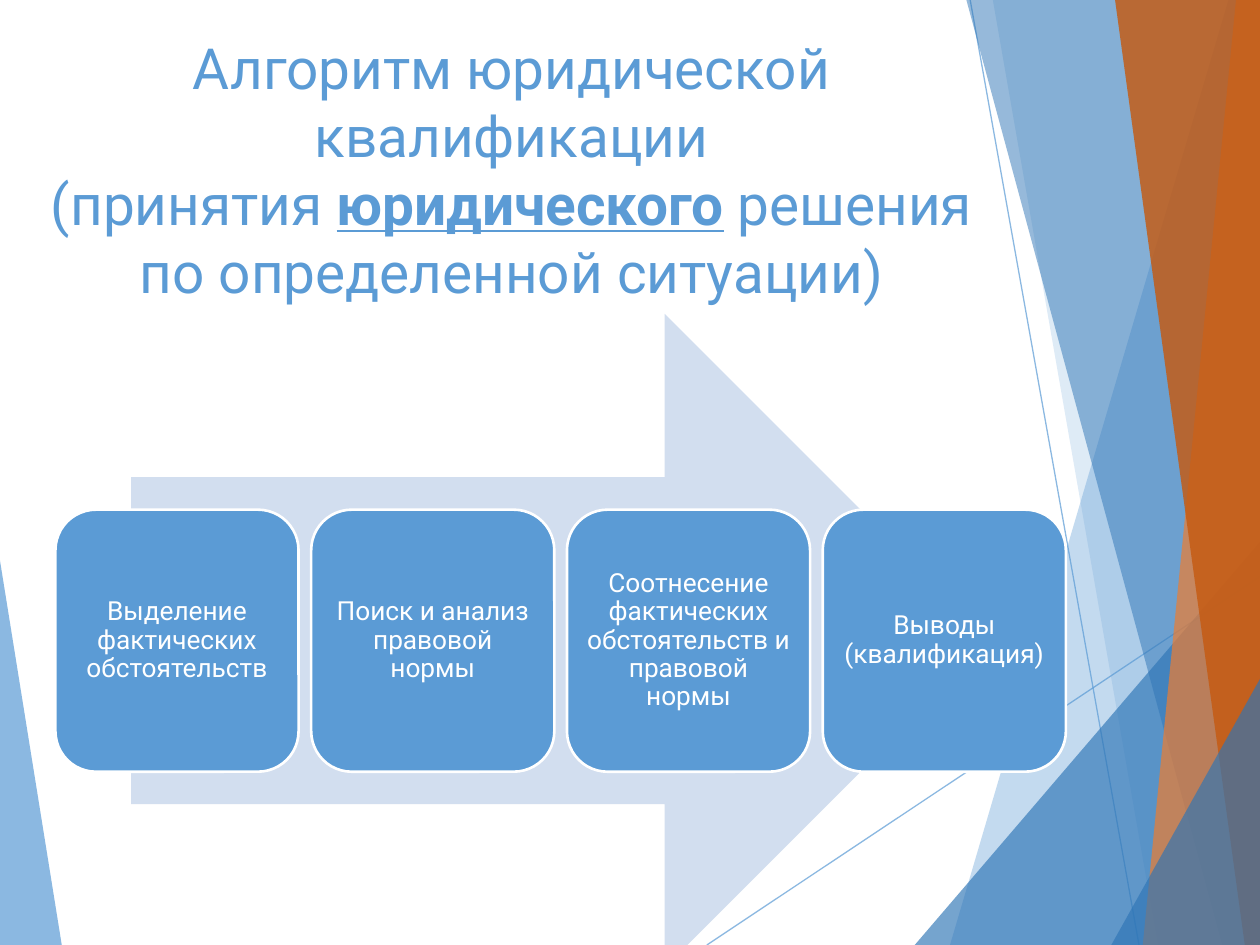
from lxml.etree import SubElement
from pptx import Presentation
from pptx.dml.color import RGBColor
from pptx.enum.shapes import MSO_CONNECTOR, MSO_SHAPE
from pptx.enum.text import MSO_ANCHOR, PP_ALIGN
from pptx.oxml.ns import qn
from pptx.util import Pt

PX = 9144
WIDTH, HEIGHT = 1000, 750
FONT = "Roboto"
WHITE = RGBColor(0xFF, 0xFF, 0xFF)
BLUE = RGBColor(0x5B, 0x9B, 0xD5)
DARK_BLUE = RGBColor(0x2E, 0x75, 0xB6)
PALE_BLUE = RGBColor(0xD2, 0xDE, 0xEF)
ORANGE = RGBColor(0xED, 0x7D, 0x31)
DARK_ORANGE = RGBColor(0xC5, 0x5A, 0x11)

RAYS = [((561, 750), (1001, 457)), ((770, 0), (904, 750))]
FACETS = [
    ([(0, 445), (49, 750), (0, 750)], BLUE, 70),
    ([(975, 0), (754, 750), (1001, 750), (1001, 0)], BLUE, 36),
    ([(788, 0), (919, 750), (1001, 750), (1001, 0)], BLUE, 20),
    ([(726, 750), (1001, 429), (1001, 750)], DARK_BLUE, 66),
    ([(767, 0), (970, 750), (1001, 750), (1001, 0)], DARK_BLUE, 50),
    ([(981, 0), (907, 750), (1001, 750), (1001, 0)], ORANGE, 70),
    ([(885, 0), (988, 750), (1001, 750), (1001, 0)], DARK_ORANGE, 82),
    ([(882, 750), (1001, 537), (1001, 750)], DARK_BLUE, 66),
]
STEPS = [
    "Выделение фактических обстоятельств",
    "Поиск и анализ правовой нормы",
    "Соотнесение фактических обстоятельств и правовой нормы",
    "Выводы (квалификация)",
]


def emu(*lengths):
    """Convert px lengths to EMU."""
    return [round(length * PX) for length in lengths]


def set_opacity(fill_parent, percent):
    """Make the solid colour inside an element partly transparent."""
    colour = fill_parent.find(qn("a:solidFill")).find(qn("a:srgbClr"))
    SubElement(colour, qn("a:alpha"), val=str(percent * 1000))


def paint(shape, colour, outline=None):
    """Give a shape a flat fill, an optional outline and no shadow."""
    shape.shadow.inherit = False
    shape.fill.solid()
    shape.fill.fore_color.rgb = colour
    if outline is None:
        shape.line.fill.background()
    else:
        shape.line.color.rgb = outline
        shape.line.width = Pt(1.5)


def add_backdrop(slide, left, top):
    """Draw the thin rays and translucent facets from a corner point."""
    for start, end in RAYS:
        ray = slide.shapes.add_connector(
            MSO_CONNECTOR.STRAIGHT,
            *emu(left + start[0], top + start[1], left + end[0], top + end[1]))
        ray.line.color.rgb = BLUE
        ray.line.width = Pt(0.75)
        properties = ray._element.spPr
        set_opacity(properties.find(qn("a:ln")), 70)
        SubElement(properties, qn("a:effectLst"))
    for points, colour, opacity in FACETS:
        corners = [(left + x, top + y) for x, y in points]
        builder = slide.shapes.build_freeform(*corners[0], scale=PX)
        builder.add_line_segments(corners[1:], close=True)
        facet = builder.convert_to_shape()
        paint(facet, colour)
        set_opacity(facet._element.spPr, opacity)


def add_title(slide, left, top, width, height):
    """Write the centred heading with its emphasised word."""
    box = slide.shapes.add_textbox(*emu(left, top, width, height))
    box.text_frame.word_wrap = True
    paragraph = box.text_frame.paragraphs[0]
    paragraph.alignment = PP_ALIGN.CENTER
    paragraph.font.name = FONT
    paragraph.font.size = Pt(32.4)
    paragraph.font.color.rgb = BLUE
    paragraph.add_run().text = "Алгоритм юридической квалификации"
    paragraph.add_line_break()
    paragraph.add_run().text = "(принятия "
    emphasis = paragraph.add_run()
    emphasis.text = "юридического"
    emphasis.font.bold = True
    emphasis.font.underline = True
    paragraph.add_run().text = " решения по определенной ситуации)"


def add_step(slide, text, left, top, width, height):
    """Draw one rounded step card with its text."""
    card = slide.shapes.add_shape(
        MSO_SHAPE.ROUNDED_RECTANGLE, *emu(left, top, width, height))
    paint(card, BLUE, WHITE)
    frame = card.text_frame
    frame.word_wrap = True
    frame.vertical_anchor = MSO_ANCHOR.MIDDLE
    frame.margin_left = frame.margin_right = 6 * PX
    frame.margin_top = frame.margin_bottom = 6 * PX
    paragraph = frame.paragraphs[0]
    paragraph.text = text
    paragraph.alignment = PP_ALIGN.CENTER
    paragraph.line_spacing = 0.9
    paragraph.font.name = FONT
    paragraph.font.size = Pt(15)
    paragraph.font.color.rgb = WHITE


def add_process(slide, left, top, width, height):
    """Draw the wide arrow and the evenly spaced steps across it."""
    inset, gap, card_height = 60, 10, 208
    arrow = slide.shapes.add_shape(
        MSO_SHAPE.RIGHT_ARROW,
        *emu(left + inset, top, width - 2 * inset + 1, height))
    paint(arrow, PALE_BLUE)
    card_width = (width - gap * (len(STEPS) - 1)) / len(STEPS)
    card_top = top + (height - card_height) / 2
    for index, text in enumerate(STEPS):
        card_left = left + index * (card_width + gap)
        add_step(slide, text, card_left, card_top, card_width, card_height)


def main():
    """Build and save the presentation."""
    presentation = Presentation()
    presentation.slide_width, presentation.slide_height = emu(WIDTH, HEIGHT)
    slide = presentation.slides.add_slide(presentation.slide_layouts[6])
    add_backdrop(slide, 0, 0)
    add_title(slide, 28, 21, 756, 167)
    add_process(slide, 44, 249, 802, 519)
    presentation.save("out.pptx")


if __name__ == "__main__":
    main()
